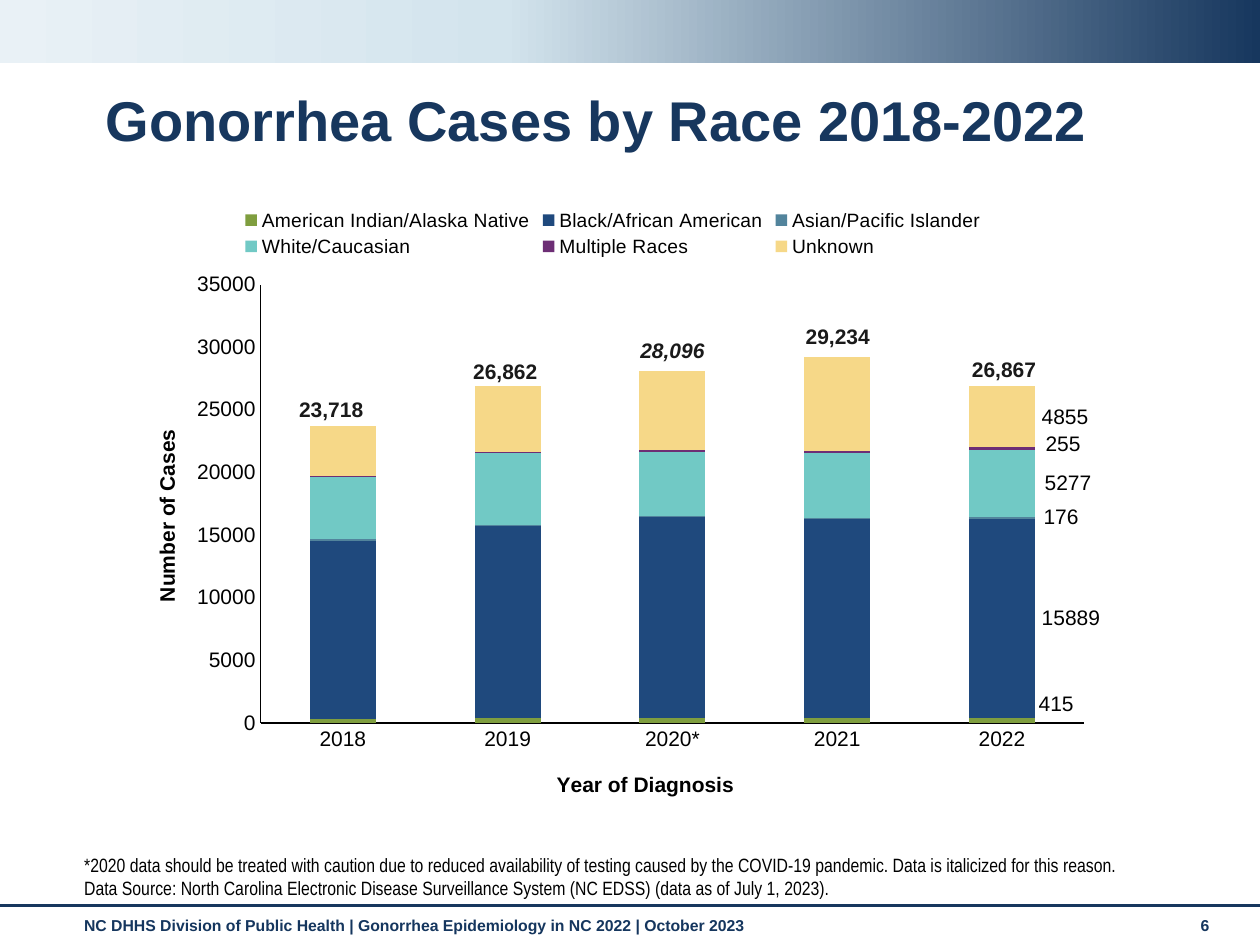
import pptx
import pptx.chart.data
import pptx.dml.color
import pptx.enum.chart
import pptx.enum.shapes
import pptx.enum.text
import pptx.oxml
import pptx.oxml.ns
import pptx.util
from lxml import etree

Pt = pptx.util.Pt
qn = pptx.oxml.ns.qn
ANCHOR = pptx.enum.text.MSO_ANCHOR
ALIGN = pptx.enum.text.PP_ALIGN
NAVY = "17375E"
BLACK = "000000"

presentation = pptx.Presentation()
presentation.slide_width = Pt(720)
presentation.slide_height = Pt(540)
slide = presentation.slides.add_slide(presentation.slide_layouts[6])


def color(value):
    return pptx.dml.color.RGBColor.from_string(value)


def add_text(text, left, top, width, height, size=12, name="Arial", fill=BLACK,
             bold=False, italic=False, align=ALIGN.LEFT, anchor=ANCHOR.TOP, spacing=1.0):
    shape = slide.shapes.add_textbox(Pt(left), Pt(top), Pt(width), Pt(height))
    frame = shape.text_frame
    frame.word_wrap = True
    frame.vertical_anchor = anchor
    frame.text = text
    for paragraph in frame.paragraphs:
        paragraph.alignment = align
        paragraph.line_spacing = spacing
        font = paragraph.runs[0].font
        font.size, font.name, font.bold, font.italic = Pt(size), name, bold, italic
        font.color.rgb = color(fill)


# Top band, dark on the right
band = slide.shapes.add_shape(pptx.enum.shapes.MSO_SHAPE.RECTANGLE, 0, 0, Pt(720), Pt(36))
band.shadow.inherit = False
band.line.fill.background()
band.fill.gradient()
band.fill.gradient_angle = 180
stops = band._element.spPr.find(".//" + qn("a:gsLst"))
for stop in list(stops):
    stops.remove(stop)
for position, value in ((0, NAVY), (60, "D3E4ED"), (100, "E9F1F6")):
    stop = etree.SubElement(stops, qn("a:gs"), pos=str(position * 1000))
    etree.SubElement(stop, qn("a:srgbClr"), val=value)

# Footer
rule = slide.shapes.add_connector(pptx.enum.shapes.MSO_CONNECTOR.STRAIGHT,
                                  0, Pt(517.7), Pt(720), Pt(517.7))
rule.line.color.rgb = color(NAVY)
rule.line.width = Pt(1.75)
etree.SubElement(rule._element.spPr, qn("a:effectLst"))
add_text("NC DHHS Division of Public Health | Gonorrhea Epidemiology in NC 2022 | October 2023",
         41, 520, 629, 21, size=9, fill="15365E", bold=True)
add_text("6", 679, 520, 32, 21, size=9, fill="15365E", bold=True)

# Title and notes below the chart
add_text("Gonorrhea Cases by Race 2018-2022", 53.3, 49, 618, 43, size=32, fill=NAVY,
         bold=True, anchor=ANCHOR.MIDDLE, spacing=0.9)
add_text("*2020 data should be treated with caution due to reduced availability of testing "
         "caused by the COVID-19 pandemic. Data is italicized for this reason.\n"
         "Data Source: North Carolina Electronic Disease Surveillance System (NC EDSS) "
         "(data as of July 1, 2023).",
         41, 491.7, 655, 26, size=11, name="Arial Narrow", anchor=ANCHOR.BOTTOM)

# Stacked chart: name, values, colour, vertical shift of the 2022 label, horizontal shift
series_rows = [
    ("American Indian/Alaska Native", (320, 379, 370, 363, 415), "7F9E3F", 0.055, -0.025),
    ("Black/African American", (14227, 15344, 16045, 15891, 15889), "1F497D", 0.07, 0),
    ("Asian/Pacific Islander", (103, 99, 112, 140, 176), "52849C", 0.06, 0),
    ("White/Caucasian", (4954, 5744, 5128, 5140, 5277), "71C9C5", 0.067, 0),
    ("Multiple Races", (80, 106, 152, 180, 255), "6D2E75", 0.062, -0.007),
    ("Unknown", (4034, 5190, 6289, 7520, 4855), "F6D888", 0.064, 0),
]
chart_data = pptx.chart.data.CategoryChartData()
chart_data.categories = ["2018", "2019", "2020*", "2021", "2022"]
for name, values, *_ in series_rows:
    chart_data.add_series(name, values)
chart = slide.shapes.add_chart(pptx.enum.chart.XL_CHART_TYPE.COLUMN_STACKED,
                               Pt(69), Pt(110), Pt(562.5), Pt(358), chart_data).chart
chart.has_title = False
chart.font.size, chart.font.name = Pt(10), "Arial"
chart.font.color.rgb = color(BLACK)
plot = chart.plots[0]
plot.gap_width, plot.overlap, plot.vary_by_categories = 150, 100, False


def place(parent, after, **settings):
    """Give a chart part a manual layout, right after the named child."""
    for layout in parent.findall(qn("c:layout")):
        parent.remove(layout)
    layout = etree.Element(qn("c:layout"))
    manual = etree.SubElement(layout, qn("c:manualLayout"))
    for key, value in settings.items():
        etree.SubElement(manual, qn("c:" + key), val=str(value))
    if after:
        parent.find(qn(after)).addnext(layout)
    else:
        parent.insert(0, layout)


# Series colours and the value labels beside the last column
for series, (_, _, fill, shift_x, shift_y) in zip(plot.series, series_rows):
    series.format.fill.solid()
    series.format.fill.fore_color.rgb = color(fill)
    series.data_labels.show_value = False
    label = series.points[4].data_label
    label.font.size, label.font.name = Pt(12), "Arial"
    label.font.color.rgb = color(BLACK)
    label.position = pptx.enum.chart.XL_LABEL_POSITION.CENTER
    labels = series.data_labels._element
    place(labels.find(qn("c:dLbl")), "c:idx", x=shift_x, y=shift_y)
    for leader in labels.findall(qn("c:showLeaderLines")):
        leader.set("val", "0")

# Axes
for axis, title, left, top in ((chart.category_axis, "Year of Diagnosis", 0.439, 0.918),
                               (chart.value_axis, "Number of Cases", 0.03, 0.372)):
    axis.has_major_gridlines = False
    axis.major_tick_mark = axis.minor_tick_mark = pptx.enum.chart.XL_TICK_MARK.NONE
    axis.tick_labels.font.size = Pt(12)
    axis.format.line.color.rgb = color(BLACK)
    axis.format.line.width = Pt(0.75)
    axis.axis_title.text_frame.text = title
    font = axis.axis_title.text_frame.paragraphs[0].runs[0].font
    font.size, font.name, font.bold = Pt(12), "Arial", True
    font.color.rgb = color(BLACK)
    place(axis.axis_title._element, "c:tx", xMode="edge", yMode="edge", x=left, y=top)
chart.value_axis.minimum_scale = 0
chart.value_axis.maximum_scale = 35000
chart.value_axis.major_unit = 5000
chart.value_axis.tick_labels.number_format = "0"
chart.value_axis.tick_labels.number_format_is_linked = False

# Legend and plot area
chart.has_legend = True
chart.legend.position = pptx.enum.chart.XL_LEGEND_POSITION.TOP
chart.legend.include_in_layout = False
chart.legend.font.size, chart.legend.font.name = Pt(11), "Arial"
chart.legend.font.color.rgb = color(BLACK)
place(chart.legend._element, "c:legendPos", xMode="edge", yMode="edge",
      x=0.12, y=0.02, w=0.76, h=0.09)
place(plot._element.getparent(), None, layoutTarget="inner", xMode="edge", yMode="edge",
      x=0.142, y=0.147, w=0.837, h=0.7)

# Totals above the columns
for total, left, top in (("23,718", 154, 223), ("26,862", 253.5, 201.5), ("28,096", 349, 189.5),
                         ("29,234", 443.5, 181.5), ("26,867", 538.5, 200)):
    add_text(total, left, top, 70.5, 21.6, fill="1A1A1A", bold=True,
             italic=total == "28,096", align=ALIGN.CENTER)

presentation.save("out.pptx")
